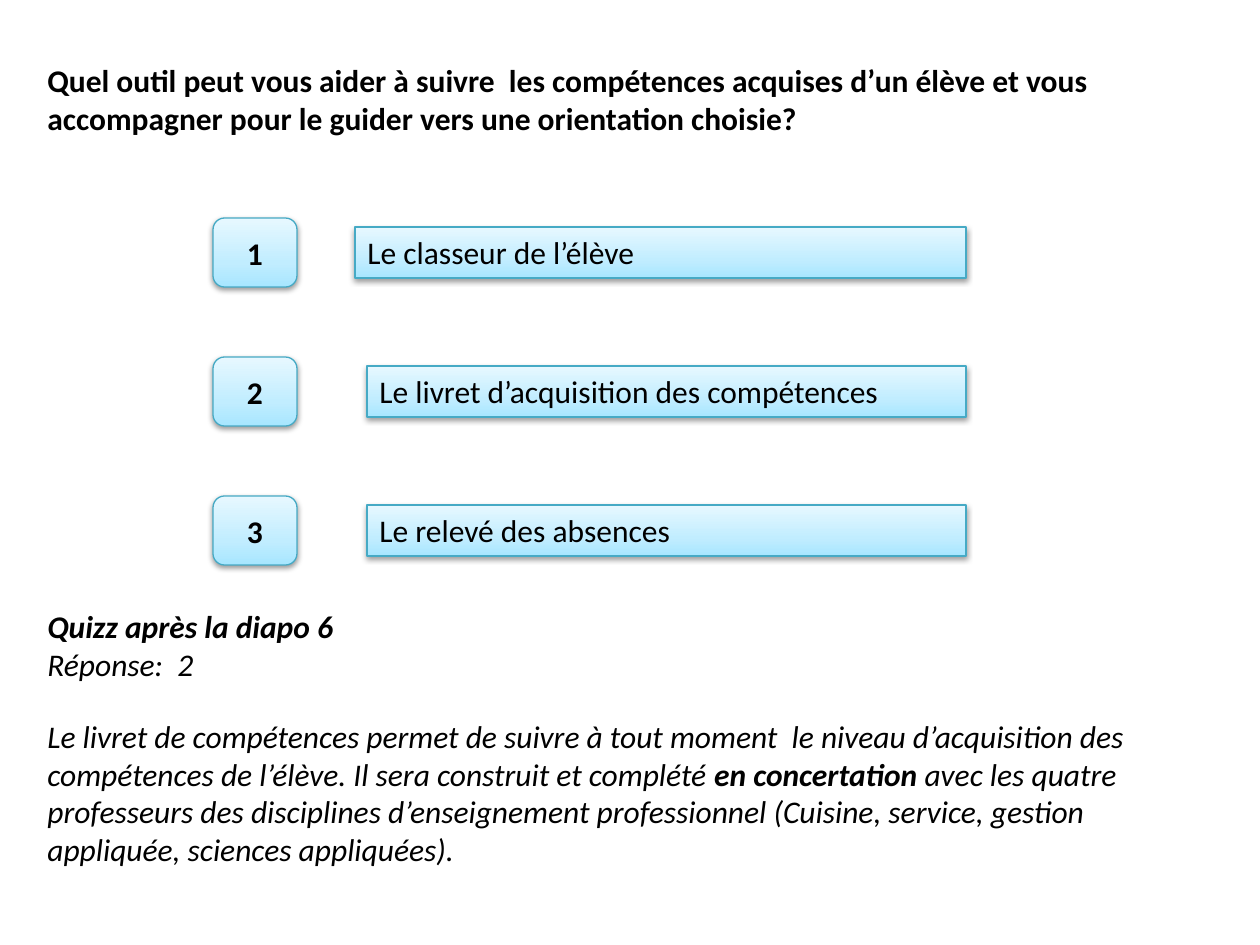
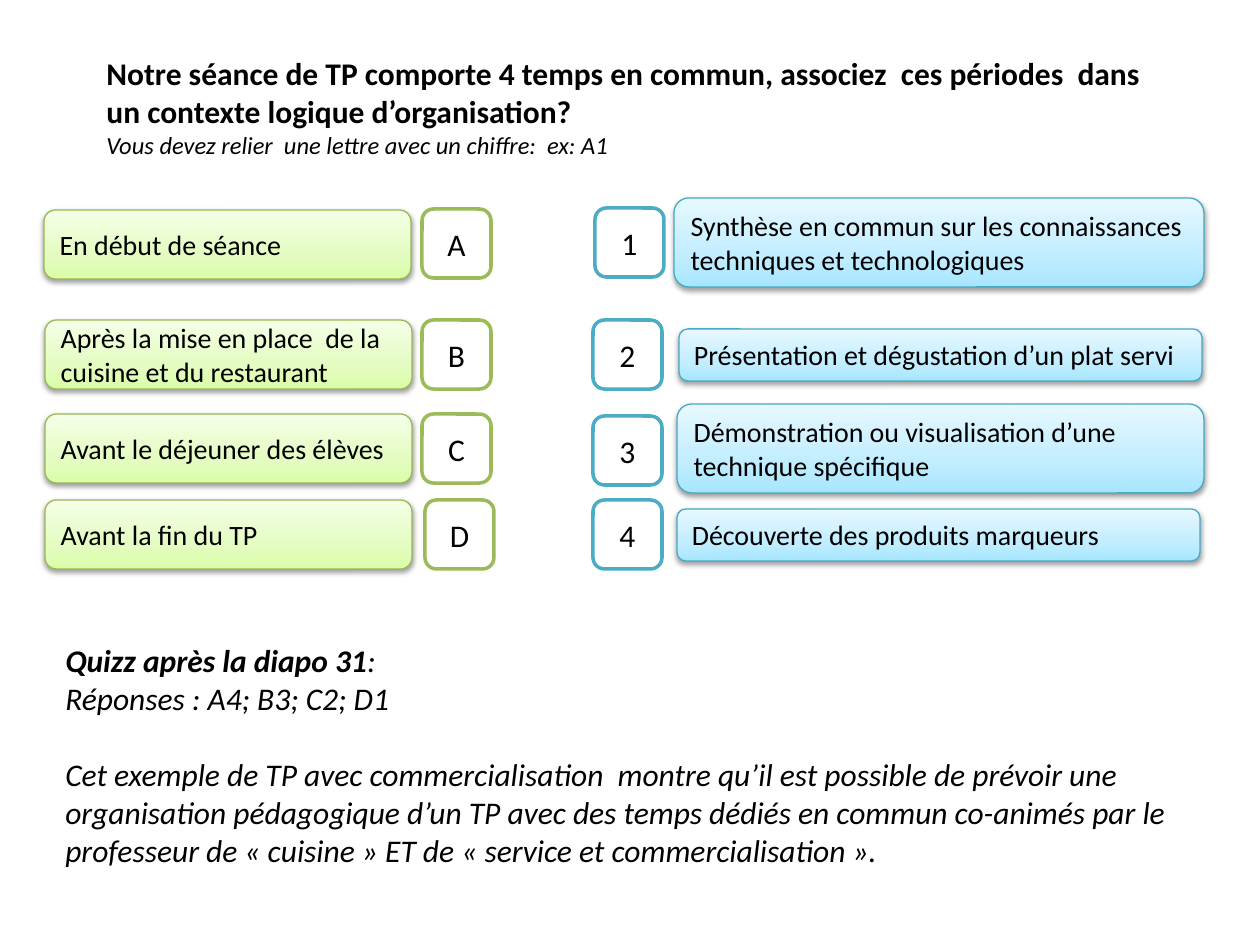
from copy import deepcopy
from lxml import etree
from pptx import Presentation
from pptx.dml.color import RGBColor
from pptx.enum.shapes import MSO_SHAPE
from pptx.enum.text import MSO_ANCHOR, PP_ALIGN
from pptx.oxml.ns import qn
from pptx.util import Pt

PX = 914400 / 126
FONT = "Calibri"
COLOURS = {
    "text": "000000",
    "white": "FFFFFF",
    "blue": {"stops": ["A7E6FF", "C1EDFF", "E7F8FF"], "edge": "46AAC5", "outline": "4BACC6"},
    "green": {"stops": ["DAFDA7", "E4FCC2", "F5FFE7"], "edge": "98B955", "outline": "9BBB59"},
}
STOP_POSITIONS = [0, 0.35, 1]


def add_box(slide, left, top, width, height, tint=None, kind=MSO_SHAPE.ROUNDED_RECTANGLE,
            raised=True, anchor=MSO_ANCHOR.MIDDLE):
    """Add a text box, or with a tint a raised gradient box or a white outlined one."""
    place = [round(value * PX) for value in (left, top, width, height)]
    if tint is None:
        box = slide.shapes.add_textbox(*place)
    else:
        box = slide.shapes.add_shape(kind, *place)
        box.shadow.inherit = False
        palette = COLOURS[tint]
        box.line.color.rgb = RGBColor.from_string(palette["edge" if raised else "outline"])
        box.line.width = Pt(0.75 if raised else 2)
        if raised:
            box.fill.gradient()
            box.fill.gradient_angle = 90
            stop_list = box.element.spPr.find(".//" + qn("a:gsLst"))
            stop_list.insert(1, deepcopy(stop_list[0]))
            for stop, position, colour in zip(box.fill.gradient_stops, STOP_POSITIONS, palette["stops"]):
                stop.position = position
                stop.color.rgb = RGBColor.from_string(colour)
            effects = box.element.spPr.find(qn("a:effectLst"))
            shadow = etree.SubElement(effects, qn("a:outerShdw"), blurRad="40000", dist="20000",
                                      dir="5400000", rotWithShape="0")
            black = etree.SubElement(shadow, qn("a:srgbClr"), val="000000")
            etree.SubElement(black, qn("a:alpha"), val="38000")
        else:
            box.fill.solid()
            box.fill.fore_color.rgb = RGBColor.from_string(COLOURS["white"])
    box.text_frame.word_wrap = True
    box.text_frame.vertical_anchor = anchor
    return box


def write(box, text, size=18, bold=False, italic=False, align=PP_ALIGN.LEFT, gap=0, same_line=False):
    """Write text as a new paragraph of the box, or on from its last one."""
    paragraph = box.text_frame.paragraphs[-1]
    if paragraph.runs and not same_line:
        paragraph = box.text_frame.add_paragraph()
    if not same_line:
        paragraph.alignment = align
        paragraph.space_before = Pt(gap)
    run = paragraph.add_run()
    run.text = text
    run.font.name = FONT
    run.font.size = Pt(size)
    run.font.bold = bold
    run.font.italic = italic
    run.font.color.rgb = RGBColor.from_string(COLOURS["text"])


presentation = Presentation()
presentation.slide_width = round(1260 * PX)
presentation.slide_height = round(945 * PX)
blank = presentation.slide_layouts[6]

# Slide 1: multiple choice question
choice_slide = presentation.slides.add_slide(blank)
question = add_box(choice_slide, 35, 55, 1171, 127, anchor=MSO_ANCHOR.TOP)
write(question, "Quel outil peut vous aider à suivre  les compétences acquises d’un élève et vous "
                "accompagner pour le guider vers une orientation choisie?", bold=True)

# Numbered choices
choices = [
    (355, "Le classeur de l’élève"),
    (367, "Le livret d’acquisition des compétences"),
    (367, "Le relevé des absences"),
]
CHOICE_RIGHT = 966
for index, (left, choice) in enumerate(choices):
    top = 218 + 139 * index
    number = add_box(choice_slide, 213, top, 84, 69, "blue")
    write(number, str(index + 1), bold=True, align=PP_ALIGN.CENTER)
    label = add_box(choice_slide, left, top + 9, CHOICE_RIGHT - left, 51, "blue",
                    kind=MSO_SHAPE.RECTANGLE, anchor=MSO_ANCHOR.TOP)
    write(label, choice)

# Answer
answer = add_box(choice_slide, 35, 601, 1147, 276, anchor=MSO_ANCHOR.TOP)
write(answer, "Quizz après la diapo 6", bold=True, italic=True)
write(answer, "Réponse:  2", italic=True)
write(answer, "Le livret de compétences permet de suivre à tout moment  le niveau d’acquisition des "
              "compétences de l’élève. Il sera construit et complété ", italic=True, gap=19.5)
write(answer, "en concertation ", bold=True, italic=True, same_line=True)
write(answer, "avec les quatre professeurs des disciplines d’enseignement professionnel "
              "(Cuisine, service, gestion appliquée, sciences appliquées).", italic=True, same_line=True)

# Slide 2: matching question
matching_slide = presentation.slides.add_slide(blank)
question = add_box(matching_slide, 94, 48, 1067, 118, anchor=MSO_ANCHOR.TOP)
write(question, "Notre séance de TP comporte 4 temps en commun, associez  ces périodes  dans "
                "un contexte logique d’organisation?", bold=True)
write(question, "Vous devez relier  une lettre avec un chiffre:  ex: A1", size=14, italic=True)

# Moments on the left, each with its letter
moments = [
    ((44, 210), (422, 209), "A", "En début de séance"),
    ((45, 320), (422, 320), "B", "Après la mise en place  de la cuisine et du restaurant"),
    ((45, 414), (422, 414), "C", "Avant le déjeuner des élèves"),
    ((45, 500), (425, 500), "D", "Avant la fin du TP"),
]
# Activities on the right, each with its number
activities = [
    ((674, 198, 530, 89), (595, 208), "1",
     "Synthèse en commun sur les connaissances techniques et technologiques"),
    ((679, 329, 523, 52), (593, 320), "2", "Présentation et dégustation d’un plat servi"),
    ((677, 404, 527, 89), (593, 416), "3", "Démonstration ou visualisation d’une technique spécifique"),
    ((677, 509, 523, 52), (593, 500), "4", "Découverte des produits marqueurs"),
]
for place, key_place, key, moment in moments:
    write(add_box(matching_slide, *place, 367, 69, "green"), moment, size=16)
    letter = add_box(matching_slide, *key_place, 69, 69, "green", raised=False)
    write(letter, key, align=PP_ALIGN.CENTER)
for place, key_place, key, activity in activities:
    write(add_box(matching_slide, *place, "blue", anchor=MSO_ANCHOR.TOP), activity, size=16)
    number = add_box(matching_slide, *key_place, 69, 69, "blue", raised=False)
    write(number, key, align=PP_ALIGN.CENTER)

# Answer
answer = add_box(matching_slide, 53, 634, 1183, 242)
write(answer, "Quizz après la diapo 31", bold=True, italic=True)
write(answer, ":", italic=True, same_line=True)
write(answer, "Réponses : A4; B3; C2; D1", italic=True)
write(answer, "Cet exemple de TP avec commercialisation  montre qu’il est possible de prévoir une "
              "organisation pédagogique d’un TP avec des temps dédiés en commun co-animés par le "
              "professeur de « cuisine » ET de « service et commercialisation ».", italic=True, gap=22)

presentation.save("out.pptx")
